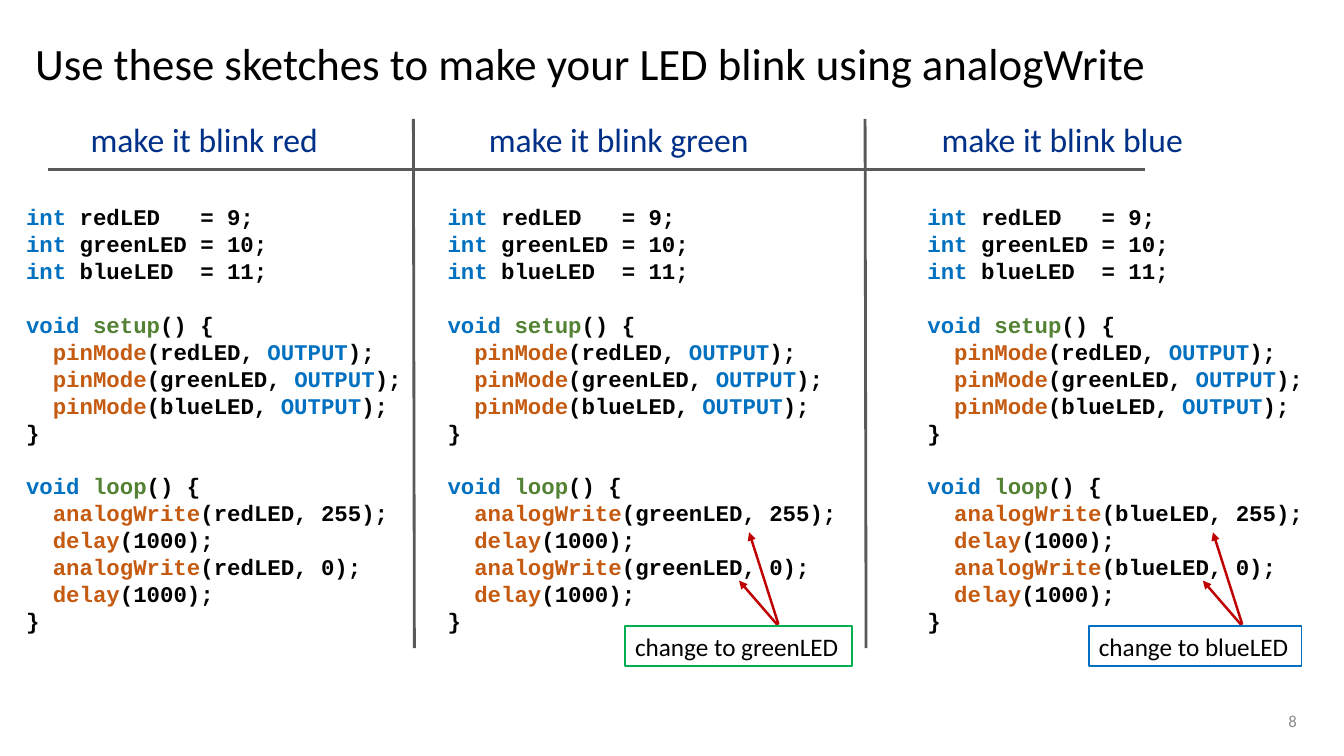
from pptx import Presentation, util as u
from pptx.dml.color import RGBColor
from pptx.enum import shapes, text
from pptx.oxml.ns import qn
from lxml import etree

PX = 9144  # EMU per px, 100 px to the inch


class Theme:
    sans, mono = "Calibri", "Courier New"
    title, heading, label, code, number = 32, 24, 18, 16, 12
    code_gap = 19.3
    black, navy, grey, rule, arrow = "000000", "003087", "8C8C8C", "595959", "C00000"
    green_box, blue_box = "00B050", "0070C0"
    keyword, entry, call = "0070C0", "548235", "C55A11"


TOKEN_COLORS = {
    "int": Theme.keyword, "void": Theme.keyword, "OUTPUT": Theme.keyword,
    "setup": Theme.entry, "loop": Theme.entry,
    "pinMode": Theme.call, "analogWrite": Theme.call, "delay": Theme.call,
}

# "|" separates tokens; <LED> stands for the pin used in the loop
SKETCH = """int |redLED   = 9;
int |greenLED = 10;
int |blueLED  = 11;

void |setup|() {
  |pinMode|(redLED, |OUTPUT|);
  |pinMode|(greenLED, |OUTPUT|);
  |pinMode|(blueLED, |OUTPUT|);
}

void |loop|() {
  |analogWrite|(<LED>, 255);
  |delay|(1000);
  |analogWrite|(<LED>, 0);
  |delay|(1000);
}"""


def add_text(content, x, y, w, h, parent, size, font=Theme.sans, color=Theme.black,
             bold=False, wrap=True, align=text.PP_ALIGN.LEFT,
             anchor=text.MSO_ANCHOR.TOP, border=None):
    """Add text; "|" splits runs, and an empty line becomes space before the next."""
    box = [v * PX for v in (x, y, w, h)]
    if border:
        sp = parent.add_shape(shapes.MSO_SHAPE.RECTANGLE, *box)
        sp.shadow.inherit = False
        sp.fill.background()
        sp.line.color.rgb = RGBColor.from_string(border)
        sp.line.width = u.Pt(1)
    else:
        sp = parent.add_textbox(*box)
    tf = sp.text_frame
    tf.word_wrap = wrap
    tf.vertical_anchor = anchor
    for b, block in enumerate(content.split("\n\n")):
        for i, line in enumerate(block.split("\n")):
            p = tf.add_paragraph() if b or i else tf.paragraphs[0]
            p.alignment = align
            if b and i == 0:
                p.space_before = u.Pt(Theme.code_gap)
            for token in line.split("|"):
                r = p.add_run()
                r.text = token
                r.font.name, r.font.size, r.font.bold = font, u.Pt(size), bold
                r.font.color.rgb = RGBColor.from_string(TOKEN_COLORS.get(token.strip(), color))


def add_line(x1, y1, x2, y2, parent, color, width, arrow=False):
    ln = parent.add_connector(shapes.MSO_CONNECTOR.STRAIGHT, x1 * PX, y1 * PX, x2 * PX, y2 * PX)
    ln.line.color.rgb = RGBColor.from_string(color)
    ln.line.width = u.Pt(width)
    if arrow:
        etree.SubElement(ln.line._get_or_add_ln(), qn("a:tailEnd"), type="triangle")
    etree.SubElement(ln._element.spPr, qn("a:effectLst"))


prs = Presentation()
prs.slide_width, prs.slide_height = 1333 * PX, 750 * PX
s = prs.slides.add_slide(prs.slide_layouts[6])

add_text("Use these sketches to make your LED blink using analogWrite",
         25, 31, 1250, 75, s.shapes, Theme.title)

# Column rules
add_line(48, 168, 1136, 168, s.shapes, Theme.rule, 2)
for x in (410, 858):
    add_line(x, 118, x + 1, 643, s.shapes, Theme.rule, 2)

# Headings and sketches: colour, heading x and width, sketch x and width
for name, head_x, head_w, code_x, code_w in (
        ("red", 80, 248, 16, 412),
        ("green", 475, 280, 434, 409),
        ("blue", 924, 262, 910, 397)):
    add_text(f"make it blink {name}", head_x, 113, head_w, 50, s.shapes,
             Theme.heading, color=Theme.navy, wrap=False)
    add_text(SKETCH.replace("<LED>", f"{name}LED"), code_x, 197, code_w, 441, s.shapes,
             Theme.code, font=Theme.mono, bold=True)

# Callouts, each with two arrows to the changed lines
for name, x, w, border in (("green", 620, 225, Theme.green_box),
                           ("blue", 1080, 211, Theme.blue_box)):
    callout = s.shapes.add_group_shape().shapes
    for start_y, dx, end_y in ((619, 123, 528), (621, 113, 576)):
        add_line(x + 152, start_y, x + dx, end_y, callout, Theme.arrow, 1.75, arrow=True)
    add_text(f"change to {name}LED", x, 621, w, 40, callout, Theme.label,
             wrap=False, border=border)

add_text("8", 942, 695, 354, 40, s.shapes, Theme.number, color=Theme.grey,
         align=text.PP_ALIGN.RIGHT, anchor=text.MSO_ANCHOR.MIDDLE)

prs.save("out.pptx")
